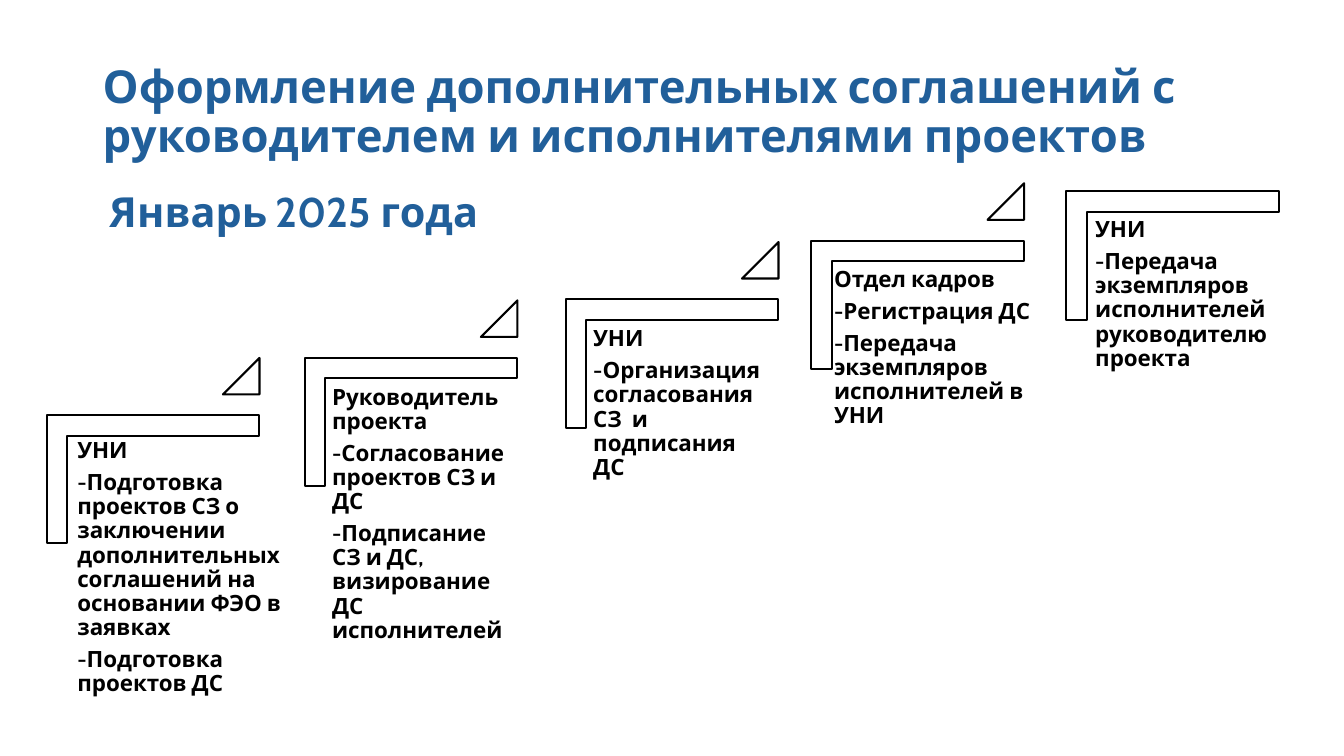
from dataclasses import dataclass

import pptx
import pptx.dml.color
import pptx.enum.shapes
import pptx.enum.text
import pptx.util

Cm = pptx.util.Cm
Pt = pptx.util.Pt
RGB = pptx.dml.color.RGBColor
SHAPE = pptx.enum.shapes.MSO_SHAPE
ANCHOR = pptx.enum.text.MSO_ANCHOR


@dataclass(frozen=True)
class Theme:
    font: str = "Cabin"
    heading: RGB = RGB(0x21, 0x5F, 0x9A)
    ink: RGB = RGB(0, 0, 0)
    paper: RGB = RGB(255, 255, 255)
    title_size: float = 32.4
    date_size: float = 29.6
    gap_size: float = 25.9
    step_size: float = 16
    outline: float = 1.5


THEME = Theme()
CORNER_SIZE = (3.23, 5.36)
TRIANGLE_SIZE = (0.92, 0.92)
TRIANGLE_OFFSET = (3.38, -0.38)

# corner left/top, text box, paragraphs
STEPS = [
    ((2.24, 9.4), (1.78, 10.9, 6.05, 4.24), [
        "УНИ",
        "-Подготовка проектов СЗ о заключении дополнительных соглашений на основании ФЭО в заявках",
        "-Подготовка проектов ДС",
    ]),
    ((8.74, 7.95), (8.2, 9.55, 4.83, 4.24), [
        "Руководитель проекта",
        "-Согласование проектов СЗ и ДС",
        "-Подписание СЗ и ДС, визирование ДС исполнителей",
    ]),
    ((15.32, 6.48), (14.78, 8.08, 4.83, 4.24), [
        "УНИ",
        "-Организация согласования СЗ  и подписания ДС",
    ]),
    ((21.51, 5), (20.85, 6.58, 6.35, 4.11), [
        "Отдел кадров",
        "-Регистрация ДС",
        "-Передача экземпляров исполнителей в УНИ",
    ]),
    ((27.94, 3.76), (27.43, 5.33, 6.43, 3.84), [
        "УНИ",
        "-Передача экземпляров исполнителей руководителю проекта",
    ]),
]


def format_run(r, size, color):
    r.font.name = THEME.font
    r.font.size = Pt(size)
    r.font.bold = True
    r.font.color.rgb = color


def add_text_frame(shapes, box):
    tf = shapes.add_textbox(*map(Cm, box)).text_frame
    tf.word_wrap = True
    return tf


def add_outlined(shapes, kind, place, size, adjustments):
    sp = shapes.add_shape(kind, *map(Cm, place + size))
    for i, value in enumerate(adjustments):
        sp.adjustments[i] = value
    sp.shadow.inherit = False
    sp.fill.solid()
    sp.fill.fore_color.rgb = THEME.paper
    sp.line.color.rgb = THEME.ink
    sp.line.width = Pt(THEME.outline)
    return sp


def add_title(shapes, text):
    tf = add_text_frame(shapes, (2.34, 1.02, 29.21, 3.68))
    tf.vertical_anchor = ANCHOR.MIDDLE
    tf.text = text
    p = tf.paragraphs[0]
    p.line_spacing = 0.9
    format_run(p.runs[0], THEME.title_size, THEME.heading)


def add_date(shapes, month, year):
    tf = add_text_frame(shapes, (2.51, 4.7, 11.13, 1.47))
    p = tf.paragraphs[0]
    p.line_spacing = 0.9
    p.space_before = Pt(10)
    for text, size, color in (
        (month, THEME.date_size, THEME.heading),
        (" ", THEME.gap_size, THEME.ink),
        (year, THEME.date_size, THEME.heading),
    ):
        r = p.add_run()
        r.text = text
        format_run(r, size, color)


def add_step_text(shapes, box, lines):
    tf = add_text_frame(shapes, box)
    tf.margin_left = tf.margin_right = tf.margin_top = tf.margin_bottom = Cm(0.17)
    tf.text = "\n".join(lines)
    for p in tf.paragraphs:
        p.line_spacing = 0.9
        p.space_after = Pt(0.35 * THEME.step_size)
        format_run(p.runs[0], THEME.step_size, THEME.ink)


def add_staircase(shapes, steps):
    for i, (corner, box, lines) in enumerate(steps):
        sp = add_outlined(shapes, SHAPE.CORNER, corner, CORNER_SIZE, (0.161, 0.161))
        sp.rotation = 90
        add_step_text(shapes, box, lines)
        if i < len(steps) - 1:
            place = tuple(a + b for a, b in zip(corner, TRIANGLE_OFFSET))
            add_outlined(shapes, SHAPE.ISOSCELES_TRIANGLE, place, TRIANGLE_SIZE, (1,))


def main():
    prs = pptx.Presentation()
    prs.slide_width = Cm(33.87)
    prs.slide_height = Cm(19.05)
    s = prs.slides.add_slide(prs.slide_layouts[6])
    add_title(s.shapes, "Оформление дополнительных соглашений с руководителем и исполнителями проектов")
    add_staircase(s.shapes.add_group_shape().shapes, STEPS)
    add_date(s.shapes, "Январь", "2025 года")
    prs.save("out.pptx")


if __name__ == "__main__":
    main()
